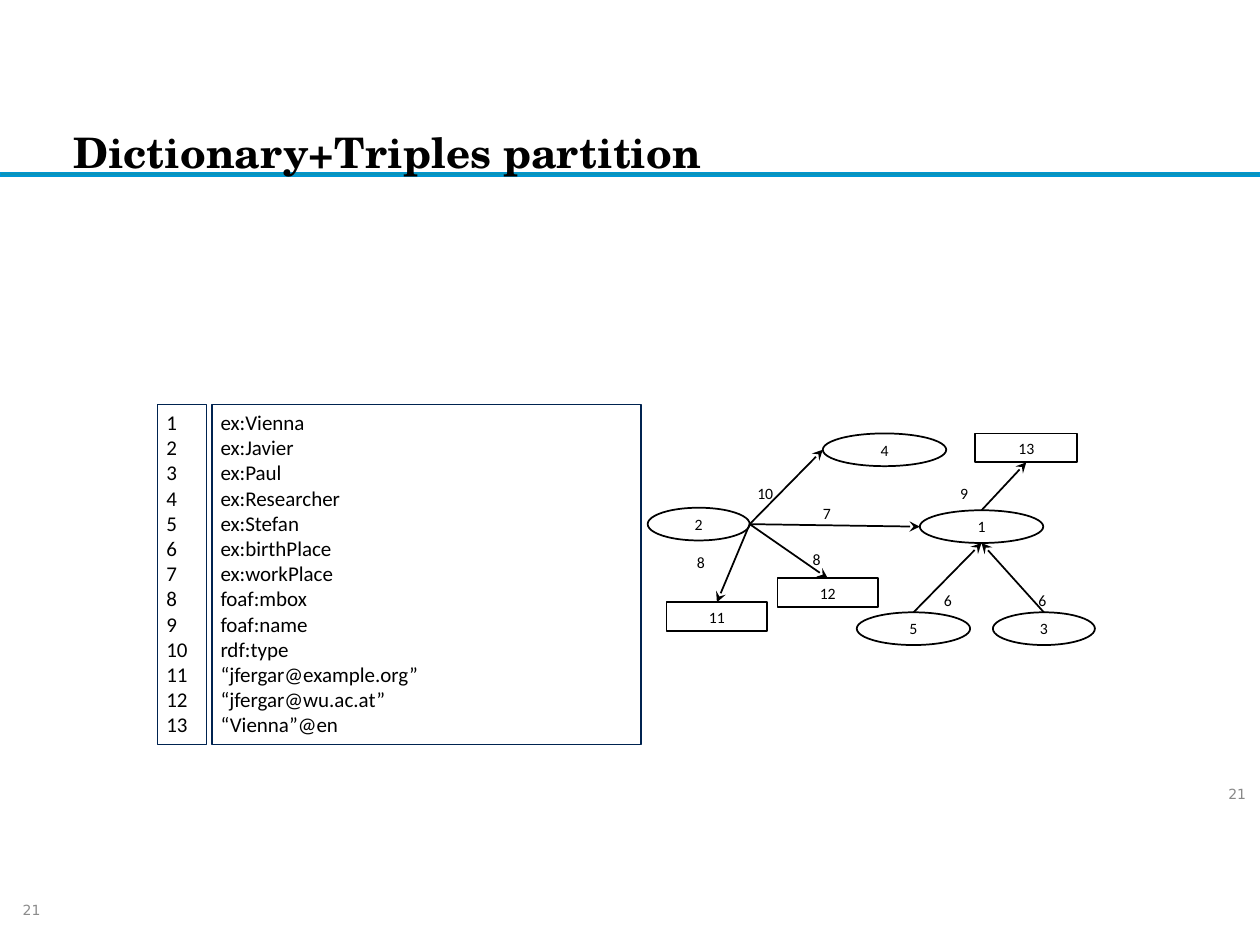
from dataclasses import dataclass

from lxml.etree import SubElement
from pptx import Presentation
from pptx.dml.color import RGBColor
from pptx.enum.shapes import MSO_CONNECTOR, MSO_SHAPE
from pptx.enum.text import MSO_ANCHOR, PP_ALIGN
from pptx.oxml.ns import qn
from pptx.util import Inches, Pt

COLS, ROWS = 100, 75
OVAL, RECT = MSO_SHAPE.OVAL, MSO_SHAPE.RECTANGLE


@dataclass(frozen=True)
class Theme:
    ink: str = "000000"
    paper: str = "FFFFFF"
    rule: str = "0C94B7"
    edge: str = "0096D3"
    frame: str = "002350"
    gray: str = "888888"
    pale: str = "8C8C8C"
    head: tuple = ("TeX Gyre Schola", 24)
    body: tuple = ("Calibri", 12)
    small: tuple = ("Calibri", 9)
    page: tuple = ("DejaVu Sans", 8)


class Deck:
    """Draws on one slide; lengths are cells of a COLS by ROWS grid."""

    def __init__(self, theme):
        self.theme = theme
        self.file = Presentation()
        self.cell = Inches(10) / COLS
        self.file.slide_width, self.file.slide_height = self.size(COLS, ROWS)
        self.slide = self.file.slides.add_slide(self.file.slide_layouts[6])
        self.area = self.slide.shapes

    def group(self):
        """Send all later elements into a new group."""
        self.area = self.slide.shapes.add_group_shape().shapes

    def size(self, *cells):
        return [round(n * self.cell) for n in cells]

    def label(self, shape, lines, font, color=None, align=PP_ALIGN.LEFT,
              anchor=MSO_ANCHOR.TOP, wrap=True, bold=False, space=None,
              pad=(0.7, 0.4)):
        frame = shape.text_frame
        frame.word_wrap, frame.vertical_anchor = wrap, anchor
        side, top = self.size(*pad)
        frame.margin_left = frame.margin_right = side
        frame.margin_top = frame.margin_bottom = top
        for i, line in enumerate(lines):
            para = frame.add_paragraph() if i else frame.paragraphs[0]
            para.alignment, para.line_spacing = align, space
            run = para.add_run()
            run.text = line
            run.font.name, run.font.size = font[0], Pt(font[1])
            run.font.bold = bold
            run.font.color.rgb = RGBColor.from_string(color or self.theme.ink)

    def text(self, at, line, font, **style):
        self.label(self.area.add_textbox(*self.size(*at)), [line], font, **style)

    def shape(self, kind, at, fill, line):
        shape = self.area.add_shape(kind, *self.size(*at))
        shape.shadow.inherit = False
        shape.fill.solid()
        shape.fill.fore_color.rgb = RGBColor.from_string(fill)
        shape.line.color.rgb = RGBColor.from_string(line)
        shape.line.width = Pt(1)
        return shape

    def panel(self, at, lines):
        shape = self.shape(RECT, at, self.theme.paper, self.theme.frame)
        self.label(shape, lines, self.theme.body)

    def node(self, kind, at, name):
        shape = self.shape(kind, at, self.theme.paper, self.theme.ink)
        self.label(shape, [name], self.theme.small, align=PP_ALIGN.CENTER,
                   anchor=MSO_ANCHOR.MIDDLE)

    def arrow(self, start, end):
        line = self.area.add_connector(MSO_CONNECTOR.STRAIGHT,
                                       *self.size(*start, *end))
        line.line.color.rgb = RGBColor.from_string(self.theme.ink)
        line.line.width = Pt(1)
        props = line._element.spPr
        SubElement(props.find(qn("a:ln")), qn("a:tailEnd"), type="stealth")
        SubElement(props, qn("a:effectLst"))


TERMS = ["ex:Vienna", "ex:Javier", "ex:Paul", "ex:Researcher", "ex:Stefan",
         "ex:birthPlace", "ex:workPlace", "foaf:mbox", "foaf:name", "rdf:type",
         "“jfergar@example.org”", "“jfergar@wu.ac.at”", "“Vienna”@en"]

# id: kind, left, top, width
NODES = {
    "2": (OVAL, 51.4, 40.3, 8.1),
    "1": (OVAL, 73, 40.5, 9.8),
    "4": (OVAL, 65.3, 34.4, 9.8),
    "5": (OVAL, 68, 48.6, 9),
    "3": (OVAL, 78.8, 48.6, 8.1),
    "11": (RECT, 52.9, 47.8, 8),
    "12": (RECT, 61.7, 45.9, 8),
    "13": (RECT, 77.4, 34.4, 8.1),
}
HIGH = {OVAL: 2.6, RECT: 2.3}

# from, side, to, side, label, label left, label top
EDGES = [
    ("2", "right", "4", "left", "10", 59.4, 38),
    ("2", "right", "1", "left", "7", 64.6, 39.6),
    ("2", "right", "12", "top", "8", 63.8, 43.2),
    ("2", "right", "11", "top", "8", 54.6, 43.5),
    ("1", "top", "13", "bottom", "9", 75.5, 38),
    ("5", "top", "1", "bottom", "6", 74.2, 46.5),
    ("3", "top", "1", "bottom", "6", 81.7, 46.5),
]
SIDES = {"left": (0, 0.5), "right": (1, 0.5), "top": (0.5, 0), "bottom": (0.5, 1)}


def port(name, side):
    """Point in the middle of one side of a node."""
    kind, left, top, wide = NODES[name]
    x, y = SIDES[side]
    return left + x * wide, top + y * HIGH[kind]


def main():
    theme = Theme()
    deck = Deck(theme)
    mid = MSO_ANCHOR.MIDDLE
    deck.shape(RECT, (0, 13.7, COLS, 0.3), theme.rule, theme.edge)
    deck.text((77.1, 61.5, 22.5, 3), "21", theme.page, color=theme.gray,
              align=PP_ALIGN.RIGHT, anchor=mid)
    deck.text((5.1, 6.8, 86.2, 10.9), "Dictionary+Triples partition",
              theme.head, bold=True, anchor=mid, space=0.9)
    deck.text((1.8, 70.5, 35.2, 3.4), "21", theme.page, color=theme.pale,
              anchor=mid, pad=(0, 0.5))

    ids = [str(i) for i in range(1, len(TERMS) + 1)]
    for left, wide, lines in ((16.8, 34.1, TERMS), (12.5, 3.9, ids)):
        deck.panel((left, 32.1, wide, 27), lines)

    deck.group()
    for name, (kind, left, top, wide) in NODES.items():
        deck.node(kind, (left, top, wide, HIGH[kind]), name)
    for tail, out, head, into, label, left, top in EDGES:
        deck.arrow(port(tail, out), port(head, into))
        deck.text((left, top, 1.6 + 0.6 * len(label), 2.3), label,
                  theme.small, wrap=False)
    deck.file.save("out.pptx")


if __name__ == "__main__":
    main()
